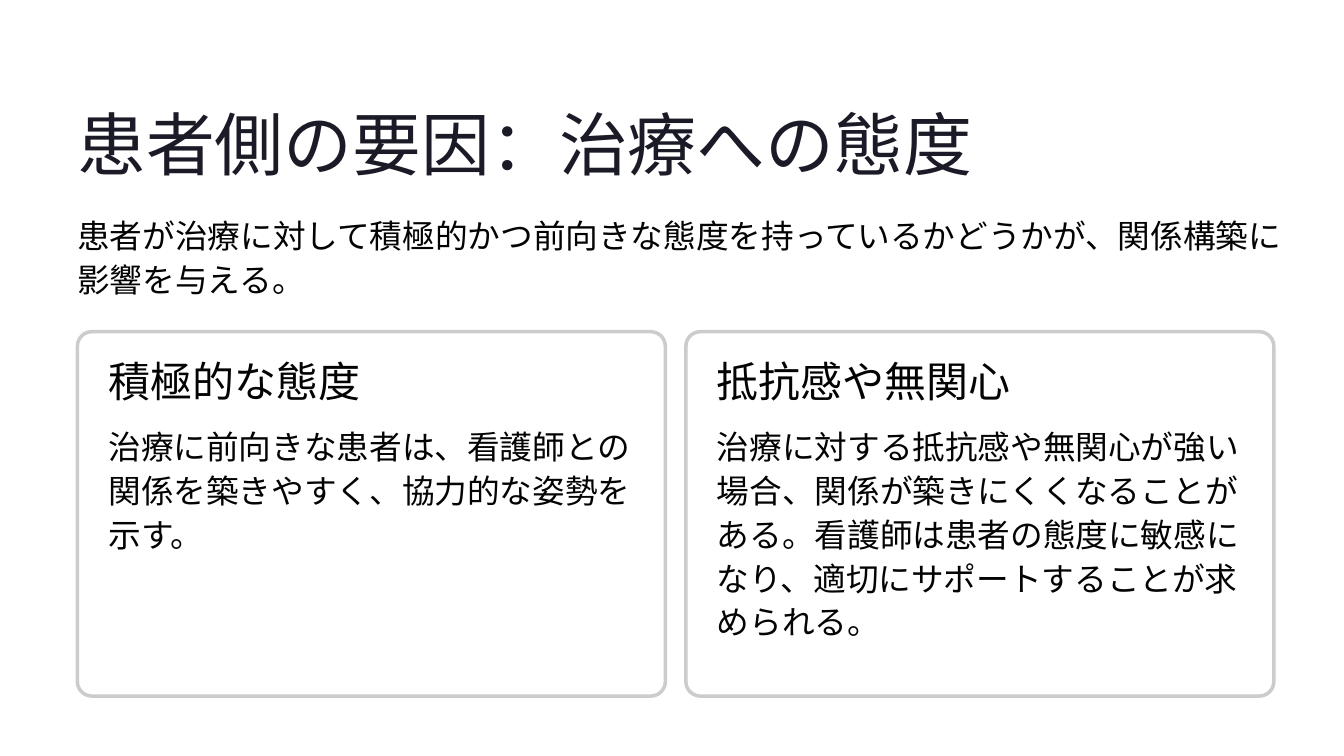
from lxml.etree import SubElement
from pptx import Presentation
from pptx.dml.color import RGBColor
from pptx.enum.shapes import MSO_SHAPE
from pptx.oxml.ns import qn
from pptx.util import Cm, Pt

COLORS = {"title": "1B1B27", "text": "030303", "card": "FFFFFF", "edge": "CCCCCC"}
LEFT = 2.34
CARD_TOP = 10.03
CARD_WIDTH = 17.78
CARD_STEP = 18.4
PAD = 0.94
CARDS = [
    ("積極的な態度",
     "治療に前向きな患者は、看護師との関係を築きやすく、協力的な姿勢を示す。", 3.25),
    ("抵抗感や無関心",
     "治療に対する抵抗感や無関心が強い場合、関係が築きにくくなることがある。"
     "看護師は患者の態度に敏感になり、適切にサポートすることが求められる。", 6.53),
]


def color(name):
    return RGBColor.from_string(COLORS[name])


def write(frame, text, font="Roboto", size=28, fill="text", line=37.5, wrap=True):
    frame.margin_left = frame.margin_right = 0
    frame.margin_top = frame.margin_bottom = 0
    frame.word_wrap = wrap
    para = frame.paragraphs[0]
    para.line_spacing = Pt(line)
    run = para.add_run()
    run.text = text
    run.font.name = font
    run.font.size = Pt(size)
    run.font.color.rgb = color(fill)


class Deck:
    def __init__(self):
        self.file = Presentation()
        self.file.slide_width = Cm(40.64)
        self.file.slide_height = Cm(22.86)
        self.slide = self.file.slides.add_slide(self.file.slide_layouts[6])

    def text(self, text, left, top, width, height, **style):
        box = self.slide.shapes.add_textbox(Cm(left), Cm(top), Cm(width), Cm(height))
        write(box.text_frame, text, **style)

    def panel(self, left, top, width, height):
        shape = self.slide.shapes.add_shape(
            MSO_SHAPE.ROUNDED_RECTANGLE, Cm(left), Cm(top), Cm(width), Cm(height))
        shape.adjustments[0] = 0.04
        shape.shadow.inherit = False
        shape.fill.solid()
        shape.fill.fore_color.rgb = color("card")
        tint = shape.fill._xPr.find(qn("a:solidFill"))[0]
        SubElement(tint, qn("a:alpha"), val="95000")
        shape.line.color.rgb = color("edge")
        shape.line.width = Pt(3)

    def card(self, left, head, body, height):
        self.panel(left, CARD_TOP, CARD_WIDTH, 11.02)
        self.text(head, left + PAD, CARD_TOP + PAD, 10.57, 1.6,
                  font="Inter", size=36, line=37, wrap=False)
        self.text(body, left + PAD, CARD_TOP + 2.75, 15.88, height)

    def save(self):
        self.file.save("out.pptx")


def main():
    deck = Deck()
    deck.text("患者側の要因：治療への態度", LEFT, 2.97, 27.15, 2.62,
              font="Inter", size=59, fill="title", line=74, wrap=False)
    deck.text("患者が治療に対して積極的かつ前向きな態度を持っているかどうかが、関係構築に影響を与える。",
              LEFT, 6.4, 36.4, 3.25)
    for i, (head, body, height) in enumerate(CARDS):
        deck.card(LEFT + i * CARD_STEP, head, body, height)
    deck.save()


if __name__ == "__main__":
    main()
